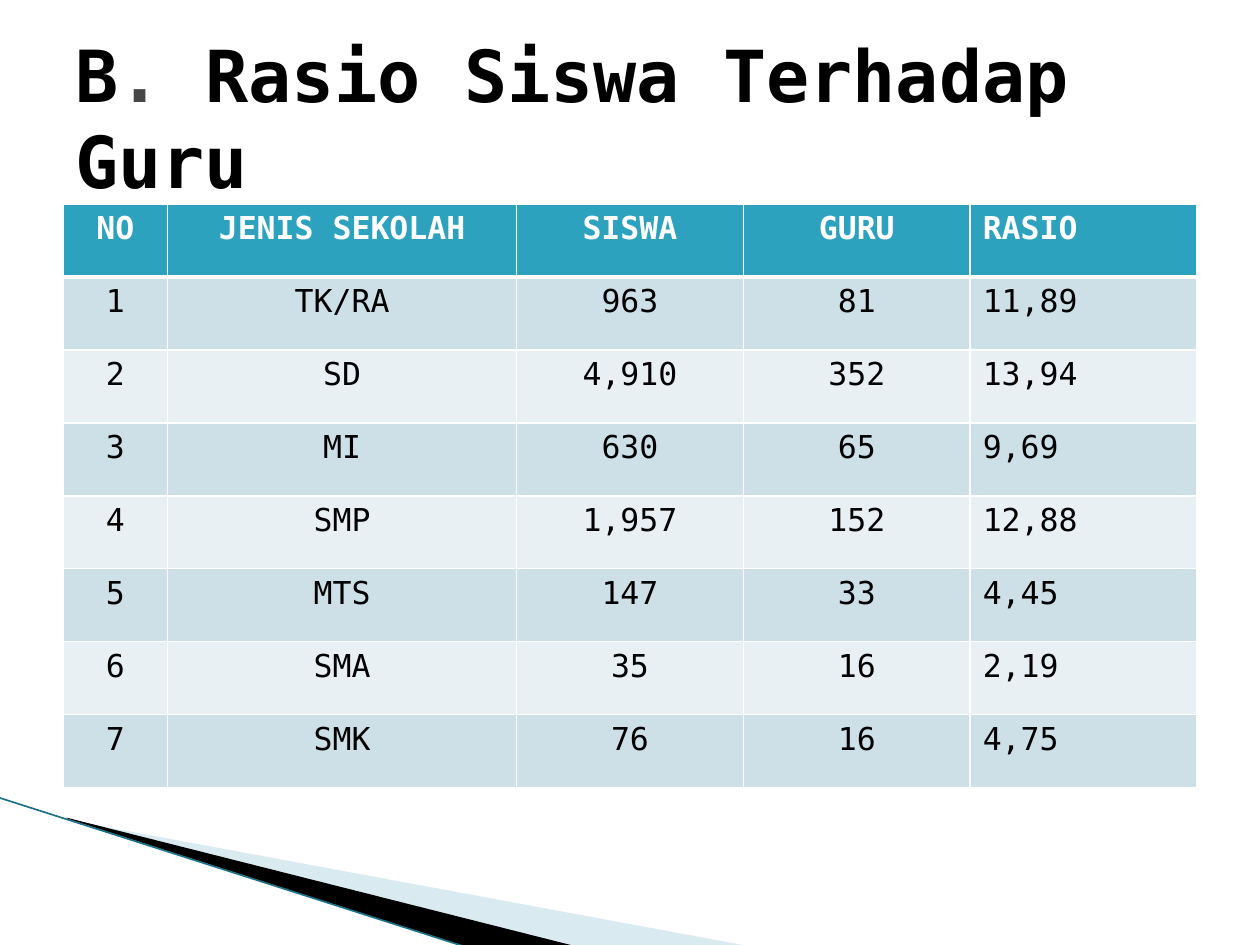
from dataclasses import dataclass

from lxml.etree import SubElement
from pptx import Presentation
from pptx.dml.color import RGBColor
from pptx.enum.shapes import MSO_CONNECTOR
from pptx.enum.text import MSO_ANCHOR, PP_ALIGN
from pptx.oxml.ns import qn
from pptx.util import Inches, Pt


@dataclass(frozen=True)
class Theme:
    font: str = "DejaVu Sans Mono"
    title_size: float = 41
    table_size: float = 18
    ink: str = "000000"
    muted: str = "464646"
    white: str = "FFFFFF"
    header: str = "2DA2BF"
    bands: tuple = ("CDE0E8", "E8F0F4")
    pale_wedge: str = "A0CBDC"
    edge: str = "1B7287"


HEADINGS = ("NO", "JENIS SEKOLAH", "SISWA", "GURU", "RASIO")
SCHOOLS = (
    ("TK/RA", "963", "81", "11,89"),
    ("SD", "4,910", "352", "13,94"),
    ("MI", "630", "65", "9,69"),
    ("SMP", "1,957", "152", "12,88"),
    ("MTS", "147", "33", "4,45"),
    ("SMA", "35", "16", "2,19"),
    ("SMK", "76", "16", "4,75"),
)
COLUMN_WIDTHS = (0.83, 2.77, 1.8, 1.8, 1.8)
TABLE_HEIGHT = 4.63


class SlideBuilder:
    def __init__(self, slide, theme):
        self.slide = slide
        self.theme = theme

    def style_run(self, run, size, color, bold):
        formats = {"name": self.theme.font, "size": Pt(size), "bold": bold}
        for key, value in formats.items():
            setattr(run.font, key, value)
        run.font.color.rgb = RGBColor.from_string(color)

    def set_frame(self, shape, frame):
        """Give a freeform a new frame while its outline stays in place."""
        left, top, width, height = map(Inches, frame)
        shift_x, shift_y = shape.left - left, shape.top - top
        outline = next(shape._element.iter(qn("a:path")))
        outline.set("w", str(width))
        outline.set("h", str(height))
        for point in outline.iter(qn("a:pt")):
            point.set("x", str(int(point.get("x")) + shift_x))
            point.set("y", str(int(point.get("y")) + shift_y))
        placement = {"left": left, "top": top, "width": width, "height": height}
        for key, value in placement.items():
            setattr(shape, key, value)

    def wedge(self, points, frame, color, opacity=100):
        corners = [(Inches(x), Inches(y)) for x, y in points]
        outline = self.slide.shapes.build_freeform(*corners[0])
        outline.add_line_segments(corners[1:], close=True)
        shape = outline.convert_to_shape()
        self.set_frame(shape, frame)
        shape.shadow.inherit = False
        shape.line.fill.background()
        shape.fill.solid()
        shape.fill.fore_color.rgb = RGBColor.from_string(color)
        if opacity < 100:
            color_node = next(shape.fill._xPr.iter(qn("a:srgbClr")))
            SubElement(color_node, qn("a:alpha")).set("val", str(opacity * 1000))

    def line(self, start, end, color, width):
        ends = [Inches(value) for value in (*start, *end)]
        connector = self.slide.shapes.add_connector(MSO_CONNECTOR.STRAIGHT, *ends)
        connector.line.color.rgb = RGBColor.from_string(color)
        connector.line.width = Pt(width)
        SubElement(connector._element.spPr, qn("a:effectLst"))

    def title(self, parts, left, top, width, height):
        box = self.slide.shapes.add_textbox(*map(Inches, (left, top, width, height)))
        frame = box.text_frame
        frame.word_wrap = True
        frame.vertical_anchor = MSO_ANCHOR.MIDDLE
        for text, color in parts:
            run = frame.paragraphs[0].add_run()
            run.text = text
            self.style_run(run, self.theme.title_size, color, True)

    def cell_borders(self, cell, bottom_width):
        """Insert the border lines ahead of the cell fill, as the schema requires."""
        properties = cell._tc.get_or_add_tcPr()
        widths = {"lnL": 1, "lnR": 1, "lnT": 1, "lnB": bottom_width}
        for index, (side, width) in enumerate(widths.items()):
            border = SubElement(properties, qn(f"a:{side}"), w=str(Pt(width)))
            fill = SubElement(border, qn("a:solidFill"))
            SubElement(fill, qn("a:srgbClr"), val=self.theme.white)
            properties.insert(index, border)

    def cell(self, cell, text, fill, is_header, alignment):
        cell.fill.solid()
        cell.fill.fore_color.rgb = RGBColor.from_string(fill)
        paragraph = cell.text_frame.paragraphs[0]
        paragraph.alignment = alignment
        run = paragraph.add_run()
        run.text = text
        color = self.theme.white if is_header else self.theme.ink
        self.style_run(run, self.theme.table_size, color, is_header)
        self.cell_borders(cell, 3 if is_header else 1)

    def table(self, rows, left, top):
        table = self.slide.shapes.add_table(
            len(rows), len(COLUMN_WIDTHS), Inches(left), Inches(top),
            Inches(sum(COLUMN_WIDTHS)), Inches(TABLE_HEIGHT),
        ).table
        for column, width in zip(table.columns, COLUMN_WIDTHS):
            column.width = Inches(width)
        last_column = len(COLUMN_WIDTHS) - 1
        for r, values in enumerate(rows):
            table.rows[r].height = Inches(TABLE_HEIGHT / len(rows))
            fill = self.theme.bands[(r - 1) % 2] if r else self.theme.header
            for c, text in enumerate(values):
                alignment = PP_ALIGN.LEFT if c == last_column else PP_ALIGN.CENTER
                self.cell(table.cell(r, c), text, fill, r == 0, alignment)


def main():
    deck = Presentation()
    deck.slide_width, deck.slide_height = Inches(10), Inches(7.5)
    theme = Theme()
    builder = SlideBuilder(deck.slides.add_slide(deck.slide_layouts[6]), theme)

    builder.wedge(
        [(0.55, 6.51), (5.95, 7.51), (4.56, 7.51), (0.55, 6.5)],
        (0.78, 5.47, 4.16, 1.58), theme.pale_wedge, 40,
    )
    builder.wedge(
        [(0.53, 6.49), (4.57, 7.51), (3.72, 7.52), (0.54, 6.5)],
        (-0.06, 6.33, 4.16, 0.92), theme.ink,
    )
    builder.line((-0.01, 6.33), (3.71, 7.52), theme.edge, 0.95)

    numbered = [(str(n), *school) for n, school in enumerate(SCHOOLS, 1)]
    builder.table([HEADINGS, *numbered], 0.5, 1.62)
    builder.title(
        [("B", theme.ink), (". ", theme.muted), ("Rasio Siswa Terhadap Guru", theme.ink)],
        0.5, 0.3, 9, 1.25,
    )
    deck.save("out.pptx")


if __name__ == "__main__":
    main()
